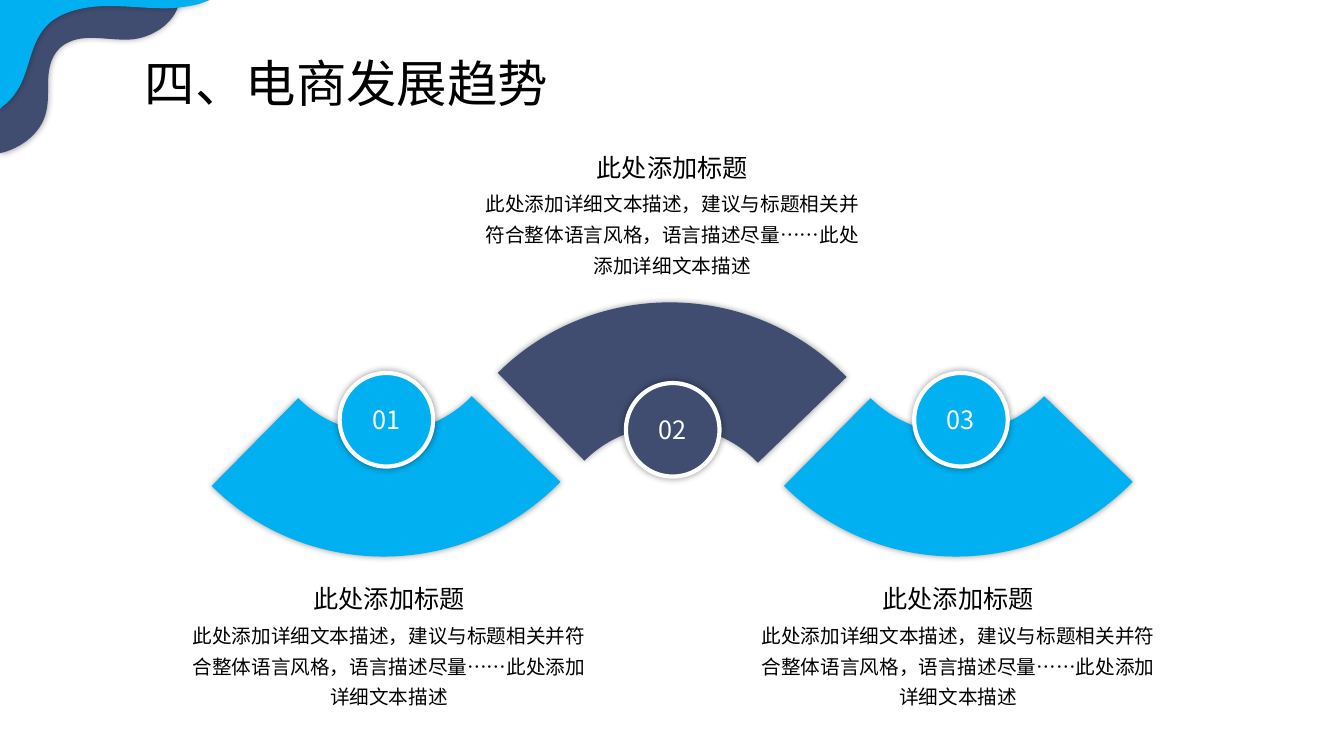
from lxml import etree
from pptx import Presentation
from pptx.dml.color import RGBColor
from pptx.enum.shapes import MSO_SHAPE
from pptx.enum.text import MSO_ANCHOR, MSO_AUTO_SIZE, PP_ALIGN
from pptx.oxml.ns import qn
from pptx.util import Pt

FONT = "Noto Sans CJK SC"
BLUE, NAVY, WHITE, BLACK = "00B0F0", "404D70", "FFFFFF", "000000"
HEADING = "此处添加标题"
DETAIL = ("此处添加详细文本描述，建议与标题相关并符合整体语言风格，"
          "语言描述尽量……此处添加详细文本描述")

# Outlines in points: a pair is a corner, six numbers are a Bezier curve
NAVY_WAVE = [
    (38.2, 0), (128.2, 0),
    (126.7, 13.7, 112.3, 25.9, 95, 28.1),
    (79.2, 29.5, 61.9, 23.8, 49, 30.2),
    (38.9, 34.6, 35.3, 44.6, 34.6, 54),
    (33.8, 63.4, 35.3, 72.7, 32.4, 82.1),
    (28.8, 94.3, 17.3, 104.4, 2.9, 108.7),
    (0, 109.4), (0, 60.5), (3.6, 58.3),
    (10.1, 54, 15.8, 49, 19.4, 43.2),
    (26.6, 31, 28.1, 16.6, 34.6, 5),
]
BLUE_WAVE = [
    (0, 0), (149.8, 0), (146.2, 1.4),
    (139, 4.3, 131, 5, 123.8, 5.8),
    (108.7, 6.5, 93.6, 4.3, 77.8, 4.3),
    (62.6, 4.3, 46.8, 7.2, 36, 15.8),
    (20.9, 28.8, 22.3, 49, 12.2, 64.8),
    (9.4, 69.1, 5.8, 73.4, 1.4, 76.3),
    (0, 77.8),
]
FAN_HEIGHT = 114.5
FAN = [
    (125.3, 114.5),
    (172.1, 113.8, 216, 95, 249.1, 61.2),
    (185.8, 0),
    (169.9, 16.6, 147.6, 25.9, 123.8, 26.6),
    (100.8, 26.6, 78.5, 18, 61.9, 1.4),
    (0, 64.1),
    (33.1, 97.2, 78.5, 115.2, 125.3, 114.5),
]


def color(value):
    return RGBColor.from_string(value)


def paint(shape, fill):
    """Solid fill, no line and a soft shadow all round."""
    shape.fill.solid()
    shape.fill.fore_color.rgb = color(fill)
    shape.line.fill.background()
    shape.shadow.inherit = False
    effects = shape.element.spPr.find(qn("a:effectLst"))
    shadow = etree.SubElement(effects, qn("a:outerShdw"), blurRad=str(Pt(5)),
                              dist="0", dir="0", algn="ctr", rotWithShape="0")
    black = etree.SubElement(shadow, qn("a:srgbClr"), val=BLACK)
    etree.SubElement(black, qn("a:alpha"), val="40000")


def add_outline(page, left, top, outline, fill, flip_height=None):
    """Draw corners as lines, then bend the curved segments."""
    def place(x, y):
        return Pt(left + x), Pt(top + (y if flip_height is None else flip_height - y))

    parts = [[place(x, y) for x, y in zip(part[::2], part[1::2])] for part in outline]
    builder = page.shapes.build_freeform(*parts[0][-1], scale=1.0)
    builder.add_line_segments([part[-1] for part in parts[1:]], close=True)
    shape = builder.convert_to_shape()
    segments = list(shape.element.iter(qn("a:lnTo")))
    for segment, part in zip(segments, parts[1:]):
        if len(part) == 3:
            curve = etree.Element(qn("a:cubicBezTo"))
            for x, y in part:
                etree.SubElement(curve, qn("a:pt"), x=str(x - shape.left),
                                 y=str(y - shape.top))
            segment.getparent().replace(segment, curve)
    paint(shape, fill)


def set_text(frame, text, size, fill=BLACK, align=PP_ALIGN.CENTER, spacing=None):
    frame.word_wrap = True
    para = frame.paragraphs[0]
    para.text = text
    para.alignment = align
    para.line_spacing = spacing
    span = para.runs[0]
    span.font.size = Pt(size)
    span.font.name = FONT
    span.font.color.rgb = color(fill)
    etree.SubElement(span.font._element, qn("a:ea"), typeface=FONT)


def add_text(shapes, left, top, width, height, text, size, **style):
    box = shapes.add_textbox(Pt(left), Pt(top), Pt(width), Pt(height))
    set_text(box.text_frame, text, size, **style)
    box.text_frame.auto_size = MSO_AUTO_SIZE.SHAPE_TO_FIT_TEXT


def add_header(page):
    add_outline(page, 0, 0, NAVY_WAVE, NAVY)
    add_outline(page, 0, 0, BLUE_WAVE, BLUE)
    add_text(page.shapes, 96.5, 27.4, 362.2, 54.7, "四、电商发展趋势", 36,
             align=PP_ALIGN.LEFT, spacing=1.14)


def add_badge(page, left, top, number, fill):
    badge = page.shapes.add_shape(MSO_SHAPE.OVAL, Pt(left), Pt(top), Pt(66.8), Pt(66.8))
    paint(badge, fill)
    badge.line.color.rgb = color(WHITE)
    badge.line.width = Pt(3)
    frame = badge.text_frame
    frame.vertical_anchor = MSO_ANCHOR.MIDDLE
    set_text(frame, number, 18, WHITE)


def add_caption(page, left, top, width):
    """Heading centred over its description."""
    group = page.shapes.add_group_shape()
    add_text(group.shapes, left, top + 23.8, width, 72, DETAIL, 14, spacing=1.3)
    add_text(group.shapes, left + (width - 161.3) / 2, top, 161.3, 28.8, HEADING, 18)


def add_steps(page, left):
    # Colour, fan top, badge left and top, caption left, top and width
    steps = [
        (BLUE, 283, 242.6, 266.4, 130.3, 413.3, 295.2),
        (NAVY, 216, 447.1, 273.6, 338.4, 105.1, 283.7),
        (BLUE, 283, 653, 266.4, 534.7, 413.3, 299.5),
    ]
    for index, (fill, top, *_) in enumerate(steps):
        flip = FAN_HEIGHT if index % 2 else None
        add_outline(page, left + index * 204.4, top, FAN, fill, flip)
    for index, (fill, _, badge_left, badge_top, *_) in enumerate(steps):
        add_badge(page, badge_left, badge_top, f"{index + 1:02}", fill)
    for index in (0, 2, 1):
        add_caption(page, *steps[index][4:])


def main():
    deck = Presentation()
    deck.slide_width, deck.slide_height = Pt(960), Pt(540)
    page = deck.slides.add_slide(deck.slide_layouts[6])
    add_header(page)
    add_steps(page, 151.2)
    deck.save("out.pptx")


if __name__ == "__main__":
    main()
